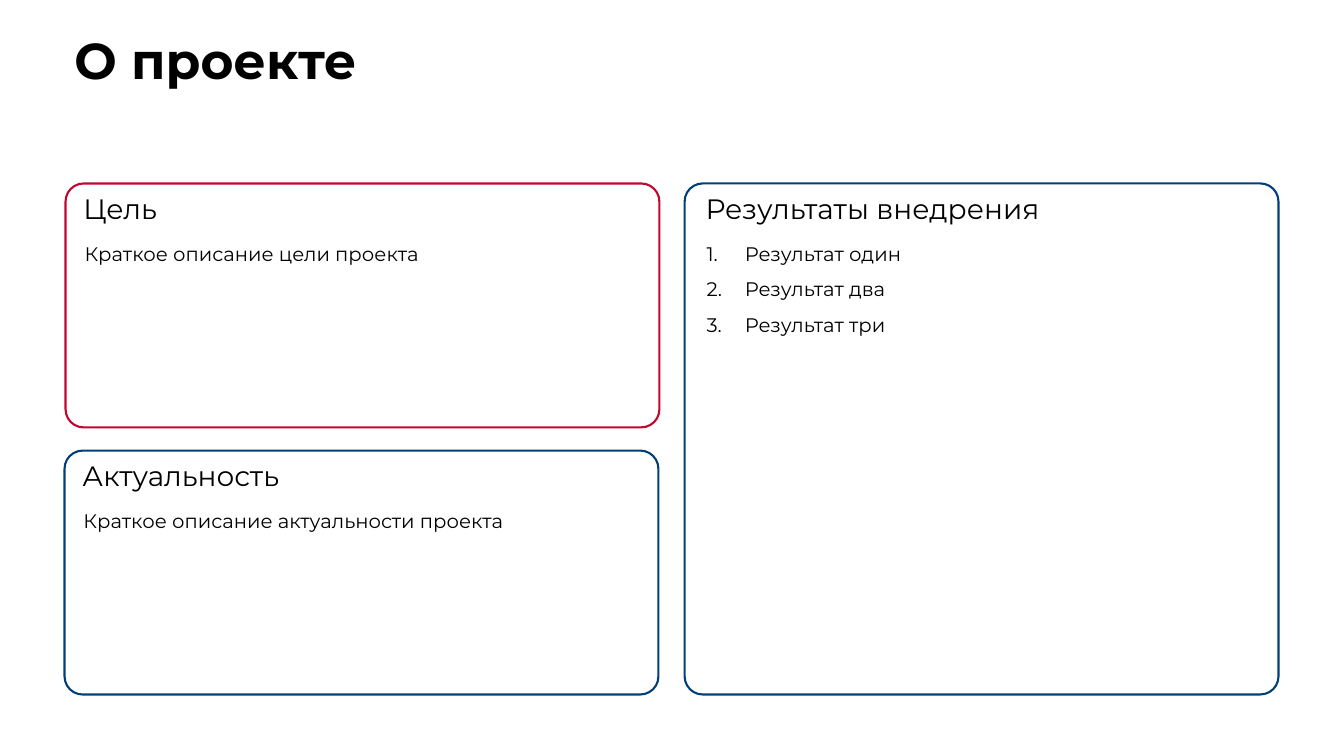
import pptx
import pptx.dml.color
import pptx.enum.shapes
import pptx.enum.text
import pptx.util
from lxml import etree

BLACK = pptx.dml.color.RGBColor(0x00, 0x00, 0x00)
WHITE = pptx.dml.color.RGBColor(0xFF, 0xFF, 0xFF)
RED = pptx.dml.color.RGBColor(0xC1, 0x06, 0x30)
BLUE = pptx.dml.color.RGBColor(0x00, 0x40, 0x77)
FONT = "Montserrat"
Inches = pptx.util.Inches
Pt = pptx.util.Pt

# Grid of cards: two columns, two rows
LEFT, TOP = 0.64, 1.82
CARD_WIDTH, CARD_HEIGHT = 5.89, 2.42
COLUMN_STEP, ROW_STEP = 6.15, 2.65
CORNER_RADIUS = 0.18
TEXT_WIDTH = 5.7
HEADING_OFFSET, HEADING_HEIGHT = 0.07, 0.42
BODY_OFFSET, BODY_MARGIN = 0.56, 0.08
NUMBER_INDENT = Inches(0.38)

presentation = pptx.Presentation()
presentation.slide_width = Inches(13.33)
presentation.slide_height = Inches(7.5)
slide = presentation.slides.add_slide(presentation.slide_layouts[6])
slide.background.fill.solid()
slide.background.fill.fore_color.rgb = WHITE


def add_text(left, top, width, height, lines, size, bold=False, numbered=False):
    box = slide.shapes.add_textbox(Inches(left), Inches(top), Inches(width), Inches(height))
    frame = box.text_frame
    frame.word_wrap = True
    frame.vertical_anchor = pptx.enum.text.MSO_ANCHOR.TOP
    for index, line in enumerate(lines):
        paragraph = frame.paragraphs[0] if index == 0 else frame.add_paragraph()
        paragraph.line_spacing = 0.9
        if index > 0:
            paragraph.space_before = Pt(10)
        if numbered:
            properties = paragraph._p.get_or_add_pPr()
            properties.set("marL", str(NUMBER_INDENT))
            properties.set("indent", str(-NUMBER_INDENT))
            numbering = etree.SubElement(properties, pptx.oxml.ns.qn("a:buAutoNum"))
            numbering.set("type", "arabicPeriod")
        run = paragraph.add_run()
        run.text = line
        run.font.name = FONT
        run.font.size = Pt(size)
        run.font.bold = bold
        run.font.color.rgb = BLACK


# Title
add_text(LEFT, 0.31, 7.58, 1.09, ["О проекте"], 36, bold=True)

# Cards: column, row, rows spanned, frame nudge, text inset, colour, heading, lines
cards = [
    (0, 0, 1, 0.01, 0.09, RED, "Цель", ["Краткое описание цели проекта"]),
    (0, 1, 1, 0, 0.08, BLUE, "Актуальность", ["Краткое описание актуальности проекта"]),
    (1, 0, 2, 0, 0.11, BLUE, "Результаты внедрения",
     ["Результат один", "Результат два", "Результат три"]),
]
for column, row, span, nudge, inset, color, heading, lines in cards:
    left = LEFT + column * COLUMN_STEP
    top = TOP + row * ROW_STEP
    height = CARD_HEIGHT + (span - 1) * ROW_STEP

    # Rounded frame
    card = slide.shapes.add_shape(
        pptx.enum.shapes.MSO_SHAPE.ROUNDED_RECTANGLE,
        Inches(left + nudge), Inches(top), Inches(CARD_WIDTH), Inches(height))
    card.adjustments[0] = CORNER_RADIUS / min(CARD_WIDTH, height)
    card.shadow.inherit = False
    card.fill.background()
    card.line.color.rgb = color
    card.line.width = Pt(1.5)

    # Heading and body text
    text_left = left + inset
    add_text(text_left, top + HEADING_OFFSET, TEXT_WIDTH, HEADING_HEIGHT, [heading], 20)
    add_text(text_left + 0.01, top + BODY_OFFSET, TEXT_WIDTH,
             height - BODY_OFFSET - BODY_MARGIN, lines, 14, numbered=len(lines) > 1)

presentation.save("out.pptx")
